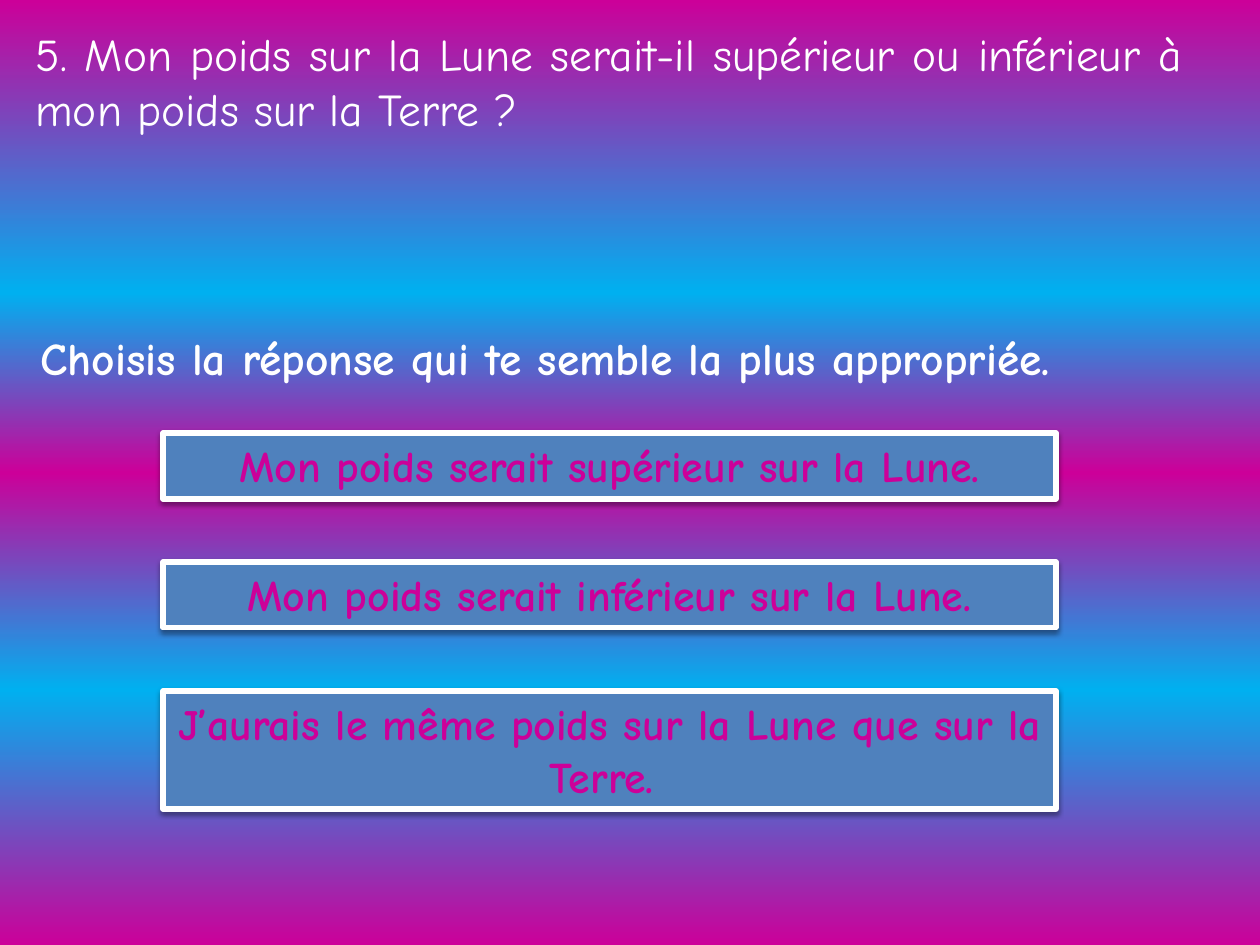
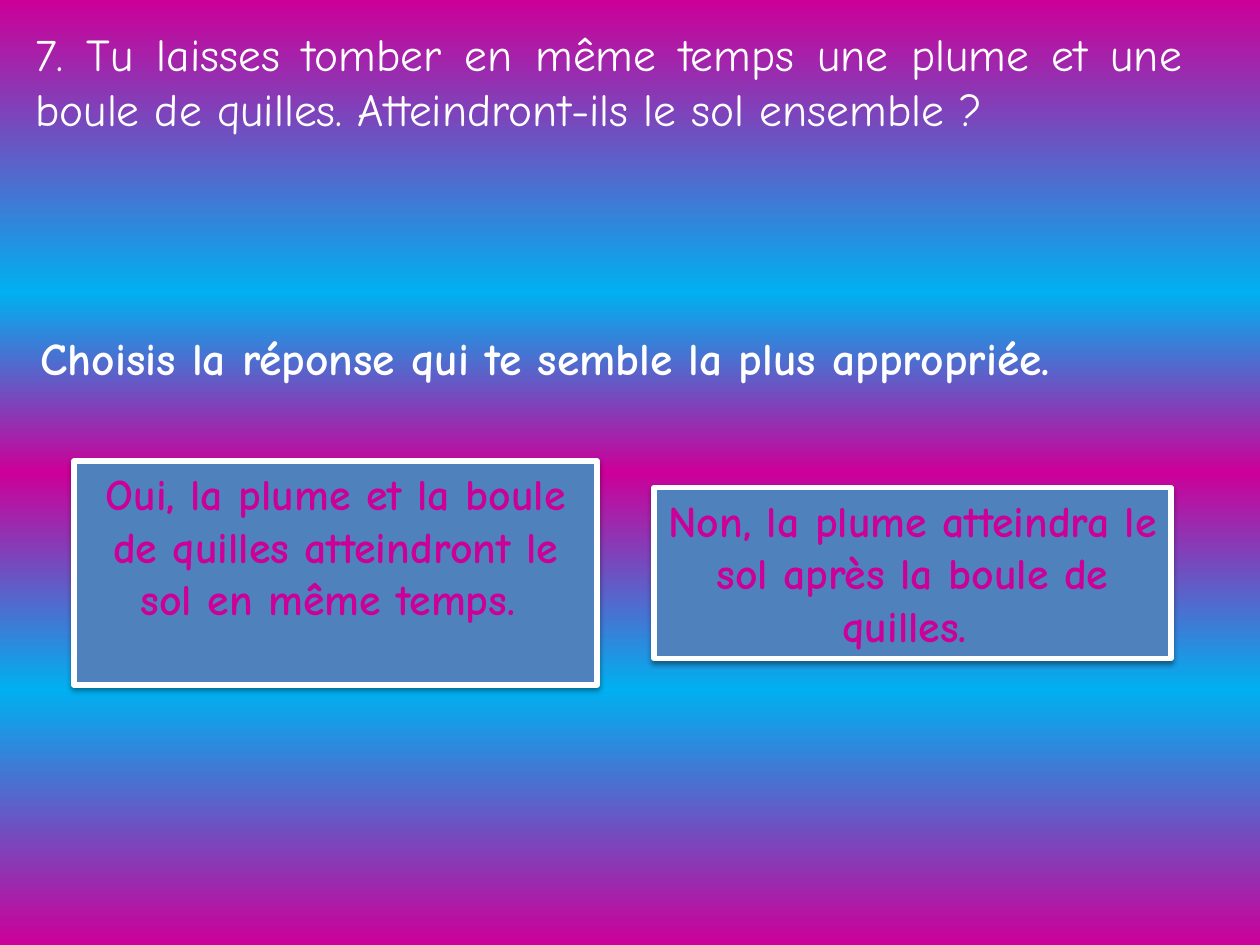
"""Build two quiz slides about weight and falling objects."""
from lxml import etree
from pptx import Presentation, util as u
from pptx.dml.color import RGBColor
from pptx.enum import shapes, text
from pptx.oxml import ns

PX = 914400 / 126
WIDTH, HEIGHT = 1260, 945
FONT = "Comic Neue"
COLORS = {"pink": "CC0099", "sky": "00B0F0", "box": "4F81BD", "white": "FFFFFF", "shadow": "000000"}
GRADIENT = [(0, "pink"), (31, "sky"), (50, "pink"), (73, "sky"), (100, "pink")]

QUESTION_PLACE = (23, 20, 1173, 123)
PROMPT_PLACE = (28, 324, 1208, 68)
PROMPT = "Choisis la réponse qui te semble la plus appropriée."

STACK = {"left": 163, "top": 433, "width": 893, "gap": 63}
ROW_MIDDLE = 573

QUIZ = [
    {
        "question": "5. Mon poids sur la Lune serait-il supérieur ou inférieur à mon poids sur la Terre ? ",
        "stacked": [
            ("Mon poids serait supérieur sur la Lune.", 66),
            ("Mon poids serait inférieur sur la Lune.", 66),
            ("J’aurais le même poids sur la Lune que sur la Terre. ", 118),
        ],
    },
    {
        "question": "7. Tu laisses tomber en même temps une plume et une boule de quilles. "
                    "Atteindront-ils le sol ensemble ?",
        "side_by_side": [
            ("Oui, la plume et la boule de quilles atteindront le sol en même temps. ", 74, 523, 224),
            ("Non, la plume atteindra le sol après la boule de quilles. ", 654, 517, 171),
        ],
    },
]


def px(*lengths):
    return [u.Emu(round(length * PX)) for length in lengths]


def rgb(name):
    return RGBColor.from_string(COLORS[name])


def add_node(parent, tag, **attributes):
    node = etree.SubElement(parent, ns.qn(tag))
    for key, value in attributes.items():
        node.set(key, str(value))
    return node


def paint_background(master):
    fill = master.background.fill
    fill.gradient()
    fill.gradient_angle = 270
    stops = master.element.find(".//" + ns.qn("a:gsLst"))
    for stop in list(stops):
        stops.remove(stop)
    for percent, name in GRADIENT:
        stop = add_node(stops, "a:gs", pos=percent * 1000)
        add_node(stop, "a:srgbClr", val=COLORS[name])


def write(shape, words, size, color, alignment, bold):
    frame = shape.text_frame
    frame.word_wrap = True
    frame.auto_size = text.MSO_AUTO_SIZE.SHAPE_TO_FIT_TEXT
    frame.vertical_anchor = text.MSO_ANCHOR.TOP
    paragraph = frame.paragraphs[0]
    paragraph.alignment = alignment
    run = paragraph.add_run()
    run.text = words
    run.font.name = FONT
    run.font.size = u.Pt(size)
    run.font.bold = bold
    run.font.color.rgb = rgb(color)


def add_heading(slide, words, place, bold=False):
    shape = slide.shapes.add_textbox(*px(*place))
    write(shape, words, 26, "white", text.PP_ALIGN.JUSTIFY, bold)


def add_answer(slide, words, place):
    shape = slide.shapes.add_shape(shapes.MSO_SHAPE.RECTANGLE, *px(*place))
    shape.fill.solid()
    shape.fill.fore_color.rgb = rgb("box")
    shape.line.color.rgb = rgb("white")
    shape.line.width = u.Pt(3)
    shape.shadow.inherit = False
    effects = shape.element.spPr.find(ns.qn("a:effectLst"))
    shadow = add_node(effects, "a:outerShdw", blurRad=u.Pt(3.1), dist=u.Pt(1.6), dir=5400000, rotWithShape=0)
    tint = add_node(shadow, "a:srgbClr", val=COLORS["shadow"])
    add_node(tint, "a:alpha", val=38000)
    write(shape, words, 25, "pink", text.PP_ALIGN.CENTER, True)


def place_answers(item):
    top = STACK["top"]
    for words, height in item.get("stacked", []):
        yield words, (STACK["left"], top, STACK["width"], height)
        top += height + STACK["gap"]
    for words, left, width, height in item.get("side_by_side", []):
        yield words, (left, ROW_MIDDLE - height / 2, width, height)


def main():
    presentation = Presentation()
    presentation.slide_width, presentation.slide_height = px(WIDTH, HEIGHT)
    paint_background(presentation.slide_master)
    for item in QUIZ:
        slide = presentation.slides.add_slide(presentation.slide_layouts[6])
        add_heading(slide, item["question"], QUESTION_PLACE)
        add_heading(slide, PROMPT, PROMPT_PLACE, bold=True)
        for words, place in place_answers(item):
            add_answer(slide, words, place)
    presentation.save("out.pptx")


if __name__ == "__main__":
    main()
